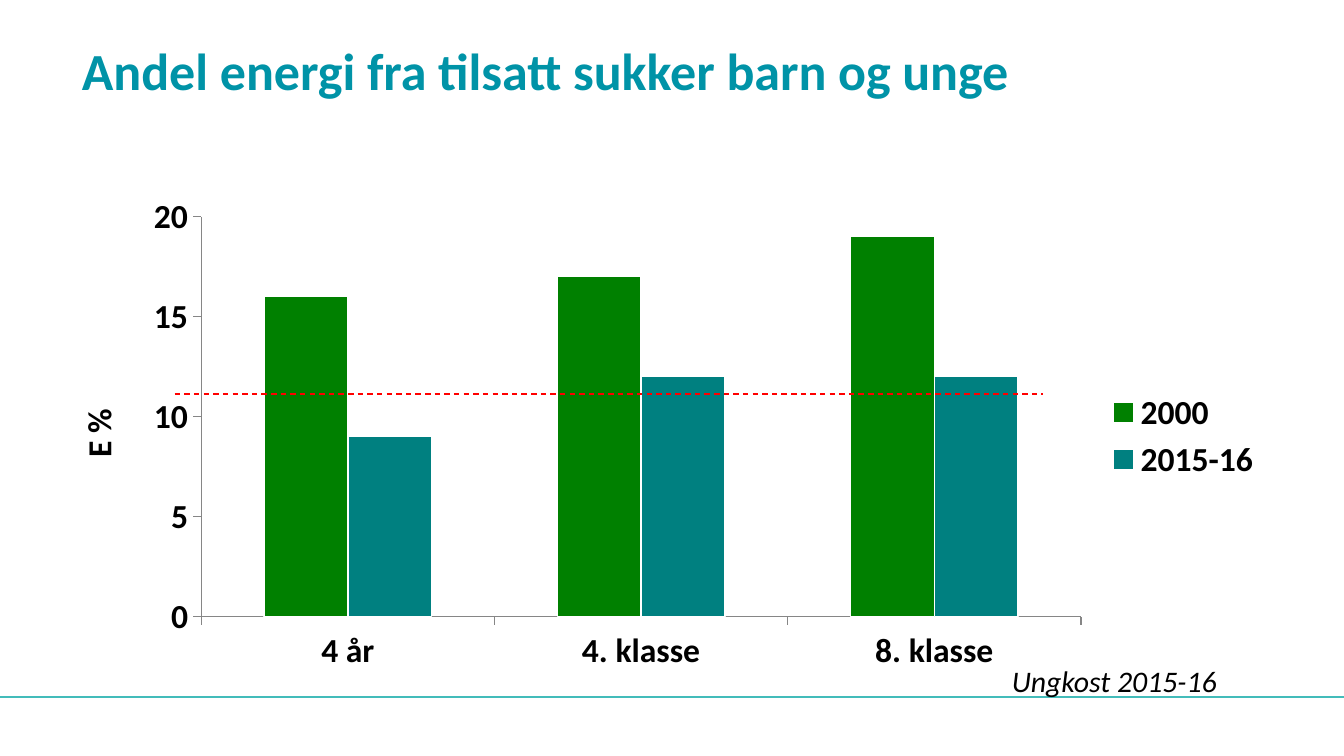
import pptx
import pptx.util
import pptx.dml.color
import pptx.chart.data
import pptx.enum.chart
import pptx.enum.shapes
import pptx.enum.text
import pptx.oxml
import pptx.oxml.ns
import lxml.etree


def color(value):
    return pptx.dml.color.RGBColor.from_string(value)


class SlideBuilder:
    font_name = "Calibri"
    text_color = "000000"
    axis_color = "868686"

    def __init__(self, presentation):
        self.width = presentation.slide_width
        self.height = presentation.slide_height
        self.slide = presentation.slides.add_slide(presentation.slide_layouts[5])

    def place(self, left, top, width, height):
        return (round(left * self.width / 100), round(top * self.height / 100),
                round(width * self.width / 100), round(height * self.height / 100))

    def style(self, font, size, value=None, bold=False, italic=False):
        font.name = self.font_name
        font.size = pptx.util.Pt(size)
        font.bold = bold
        font.italic = italic
        font.color.rgb = color(value or self.text_color)

    def title(self, text, box, size, value):
        shape = self.slide.shapes.title
        shape.left, shape.top, shape.width, shape.height = self.place(*box)
        frame = shape.text_frame
        frame.text = text
        frame.word_wrap = True
        frame.auto_size = pptx.enum.text.MSO_AUTO_SIZE.NONE
        frame.vertical_anchor = pptx.enum.text.MSO_ANCHOR.BOTTOM
        paragraph = frame.paragraphs[0]
        paragraph.alignment = pptx.enum.text.PP_ALIGN.LEFT
        self.style(paragraph.runs[0].font, size, value, bold=True)

    def text(self, text, box, size, italic=False):
        frame = self.slide.shapes.add_textbox(*self.place(*box)).text_frame
        frame.text = text
        frame.word_wrap = True
        self.style(frame.paragraphs[0].runs[0].font, size, italic=italic)

    def horizontal_line(self, start, end, top, value, width, dash="solid"):
        begin_x, y, end_x, _ = self.place(start, top, end, 0)
        connector = self.slide.shapes.add_connector(
            pptx.enum.shapes.MSO_CONNECTOR.STRAIGHT, begin_x, y, end_x, y)
        connector.line.color.rgb = color(value)
        connector.line.width = pptx.util.Pt(width)
        element = connector._element
        line = element.spPr.find(pptx.oxml.ns.qn("a:ln"))
        lxml.etree.SubElement(line, pptx.oxml.ns.qn("a:prstDash"), val=dash)
        lxml.etree.SubElement(line, pptx.oxml.ns.qn("a:round"))
        lxml.etree.SubElement(element.spPr, pptx.oxml.ns.qn("a:effectLst"))
        element.remove(element.find(pptx.oxml.ns.qn("p:style")))

    def column_chart(self, categories, series, box, plot, axis_title, maximum, step):
        data = pptx.chart.data.CategoryChartData()
        data.categories = categories
        for name, values, _ in series:
            data.add_series(name, values)
        chart = self.slide.shapes.add_chart(
            pptx.enum.chart.XL_CHART_TYPE.COLUMN_CLUSTERED, *self.place(*box), data).chart
        self.style(chart.font, 18, bold=True)
        chart.has_title = False
        chart.has_legend = True
        chart.legend.position = pptx.enum.chart.XL_LEGEND_POSITION.RIGHT
        chart.legend.include_in_layout = False

        columns = chart.plots[0]
        columns.gap_width = 150
        columns.overlap = 0
        columns.vary_by_categories = False
        for item, (_, _, fill) in zip(columns.series, series):
            item.format.fill.solid()
            item.format.fill.fore_color.rgb = color(fill)
            item.format.line.color.rgb = color("FFFFFF")
            item.format.line.width = pptx.util.Pt(0.75)

        for axis in (chart.category_axis, chart.value_axis):
            axis.has_major_gridlines = False
            axis.major_tick_mark = pptx.enum.chart.XL_TICK_MARK.OUTSIDE
            axis.minor_tick_mark = pptx.enum.chart.XL_TICK_MARK.NONE
            axis.format.line.color.rgb = color(self.axis_color)
            axis.format.line.width = pptx.util.Pt(0.75)
        chart.value_axis.minimum_scale = 0
        chart.value_axis.maximum_scale = maximum
        chart.value_axis.major_unit = step
        frame = chart.value_axis.axis_title.text_frame
        frame.text = axis_title
        self.style(frame.paragraphs[0].runs[0].font, 18, bold=True)
        self.plot_layout(chart, plot)

    def plot_layout(self, chart, plot):
        area = chart._chartSpace.chart.plotArea
        for old in area.findall(pptx.oxml.ns.qn("c:layout")):
            area.remove(old)
        settings = [("layoutTarget", "inner"), ("xMode", "edge"), ("yMode", "edge")]
        settings += [(name, share / 100) for name, share in zip("xywh", plot)]
        items = "".join(f'<c:{name} val="{value}"/>' for name, value in settings)
        area.insert(0, pptx.oxml.parse_xml(
            f'<c:layout {pptx.oxml.ns.nsdecls("c")}>'
            f'<c:manualLayout>{items}</c:manualLayout></c:layout>'))


def main():
    presentation = pptx.Presentation()
    presentation.slide_width = pptx.util.Pt(720)
    presentation.slide_height = pptx.util.Pt(405)

    builder = SlideBuilder(presentation)
    margin, content_width = 5.1, 89.8
    builder.horizontal_line(0, 100, 92.2, "43BCBA", 1)
    builder.title("Andel energi fra tilsatt sukker barn og unge",
                  (margin, 2.1, content_width, 12.1), 27.9, "0093A7")
    builder.column_chart(
        ["4 år", "4. klasse", "8. klasse"],
        [("2000", (16, 17, 19), "008000"), ("2015-16", (9, 12, 12), "008080")],
        (margin, 24.7, content_width, 66), (11, 6, 72.9, 80.2), "E %", 20, 5)
    builder.horizontal_line(13, 77.6, 52.1, "FF0000", 0.75, "dash")
    builder.text("Ungkost 2015-16", (74.3, 86.8, 22, 6.6), 16, italic=True)
    presentation.save("out.pptx")


if __name__ == "__main__":
    main()
